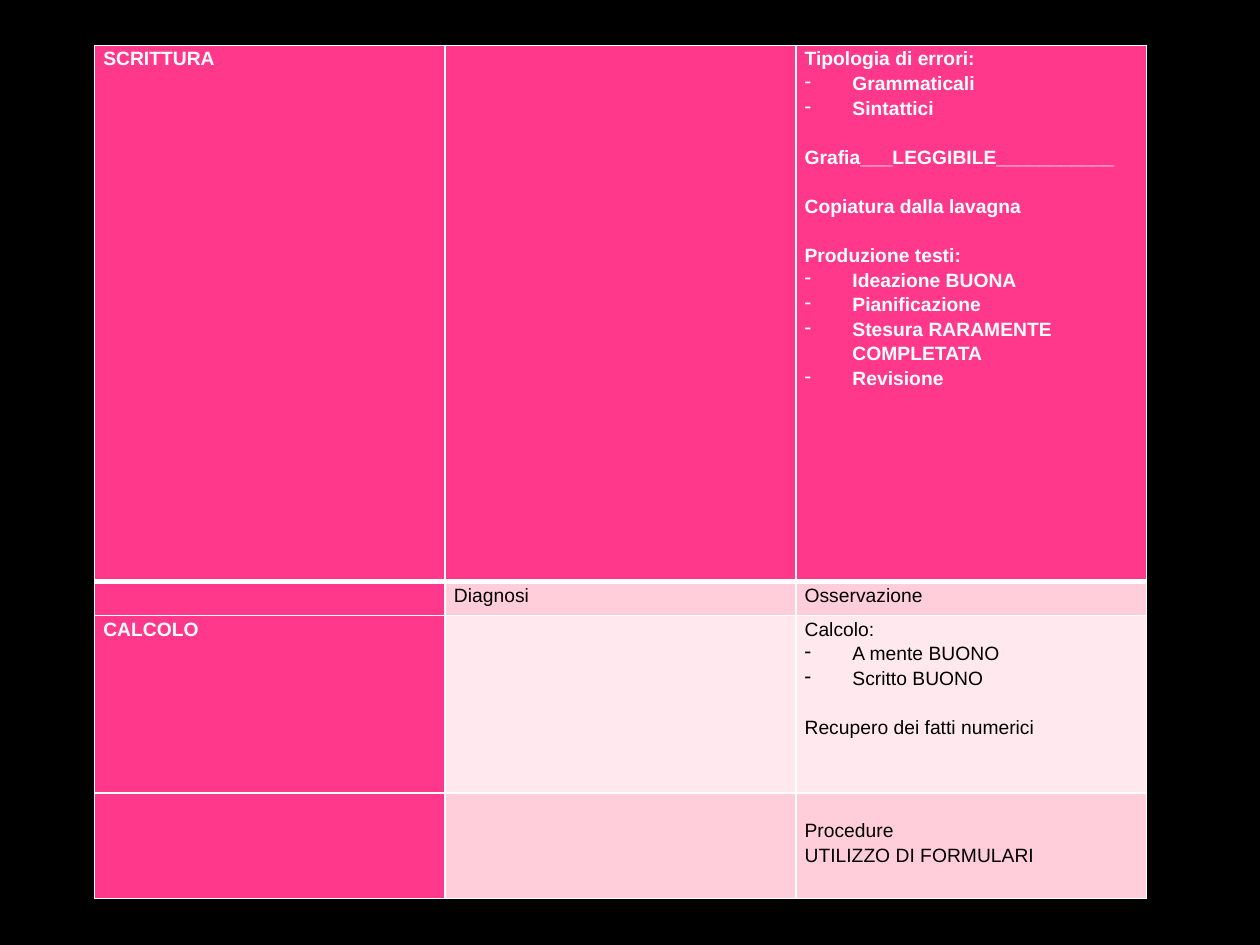
from lxml.etree import SubElement as Sub
from pptx import Presentation
from pptx.dml.color import RGBColor
from pptx.oxml import parse_xml
from pptx.oxml.ns import nsdecls, qn
from pptx.util import Inches, Pt

PINK, ROSE, PALE = "FF388C", "FFCEDA", "FFE8EE"
WHITE, BLACK = "FFFFFF", "000000"
SIZE, GAP = 11, 14
PAD, HANG = 0.07, 0.38

WRITING = """Tipologia di errori:
- Grammaticali
- Sintattici

Grafia___LEGGIBILE___________

Copiatura dalla lavagna

Produzione testi:
- Ideazione BUONA
- Pianificazione
- Stesura RARAMENTE COMPLETATA
- Revisione"""

MATHS = """Calcolo:
- A mente BUONO
- Scritto BUONO

Recupero dei fatti numerici"""

FORMULAS = """
Procedure
UTILIZZO DI FORMULARI"""

ROWS = [
    (4.26, PINK, ("SCRITTURA", "", WRITING)),
    (0.27, ROSE, ("", "Diagnosi", "Osservazione")),
    (1.41, PALE, ("CALCOLO", "", MATHS)),
    (0.84, ROSE, ("", "", FORMULAS)),
]


def paint(fill, tone):
    fill.solid()
    fill.fore_color.rgb = RGBColor.from_string(tone)


def edge(cell, side, width):
    line = parse_xml(
        f'<a:ln{side} {nsdecls("a")} w="{Pt(width)}"><a:solidFill>'
        f'<a:srgbClr val="{WHITE}"/></a:solidFill></a:ln{side}>')
    cell._tc.get_or_add_tcPr().insert("LRTB".index(side), line)


def write(cell, text, tone, bold):
    drop = Pt(GAP) if text.startswith("\n") else 0
    cell.margin_left = cell.margin_right = Inches(PAD)
    cell.margin_top, cell.margin_bottom = drop, 0
    frame = cell.text_frame
    lines = [(line, block > 0 and row == 0)
             for block, part in enumerate(text.strip().split("\n\n"))
             for row, line in enumerate(part.split("\n"))]
    frame.text = "\n".join(line.removeprefix("- ") for line, _ in lines)
    for para, (line, gap) in zip(frame.paragraphs, lines):
        para.line_spacing = 1.15
        if gap:
            para.space_before = Pt(GAP)
        if line.startswith("- "):
            props = para._p.get_or_add_pPr()
            props.set("marL", str(Inches(HANG)))
            props.set("indent", str(-Inches(HANG)))
            Sub(props, qn("a:buChar"), char="-")
        for run in para.runs:
            font = run.font
            font.name, font.size, font.bold = "Arial", Pt(SIZE), bold
            font.color.rgb = RGBColor.from_string(tone)
        Sub(para._p, qn("a:endParaRPr"), sz=str(SIZE * 100))


def grid(slide, left, top, width, height):
    count = len(ROWS[0][2])
    table = slide.shapes.add_table(
        len(ROWS), count, left, top, width, height).table
    for col in table.columns:
        col.width = int(width / count)
    total = sum(share for share, _, _ in ROWS)
    for r, (share, tint, texts) in enumerate(ROWS):
        table.rows[r].height = int(height * share / total)
        for c, text in enumerate(texts):
            cell = table.cell(r, c)
            head = r == 0 or c == 0
            write(cell, text, WHITE if head else BLACK, head)
            paint(cell.fill, PINK if head else tint)
            for side in "LRTB":
                thick = (r, side) in ((0, "B"), (1, "T"))
                edge(cell, side, 3 if thick else 1)


def main():
    deck = Presentation()
    deck.slide_width, deck.slide_height = Inches(10), Inches(7.5)
    wide, high = deck.slide_width, deck.slide_height
    slide = deck.slides.add_slide(deck.slide_layouts[6])
    paint(slide.background.fill, BLACK)
    grid(slide, int(wide * 0.075), int(high * 0.048),
         int(wide * 0.835), int(high * 0.903))
    deck.save("out.pptx")


if __name__ == "__main__":
    main()
